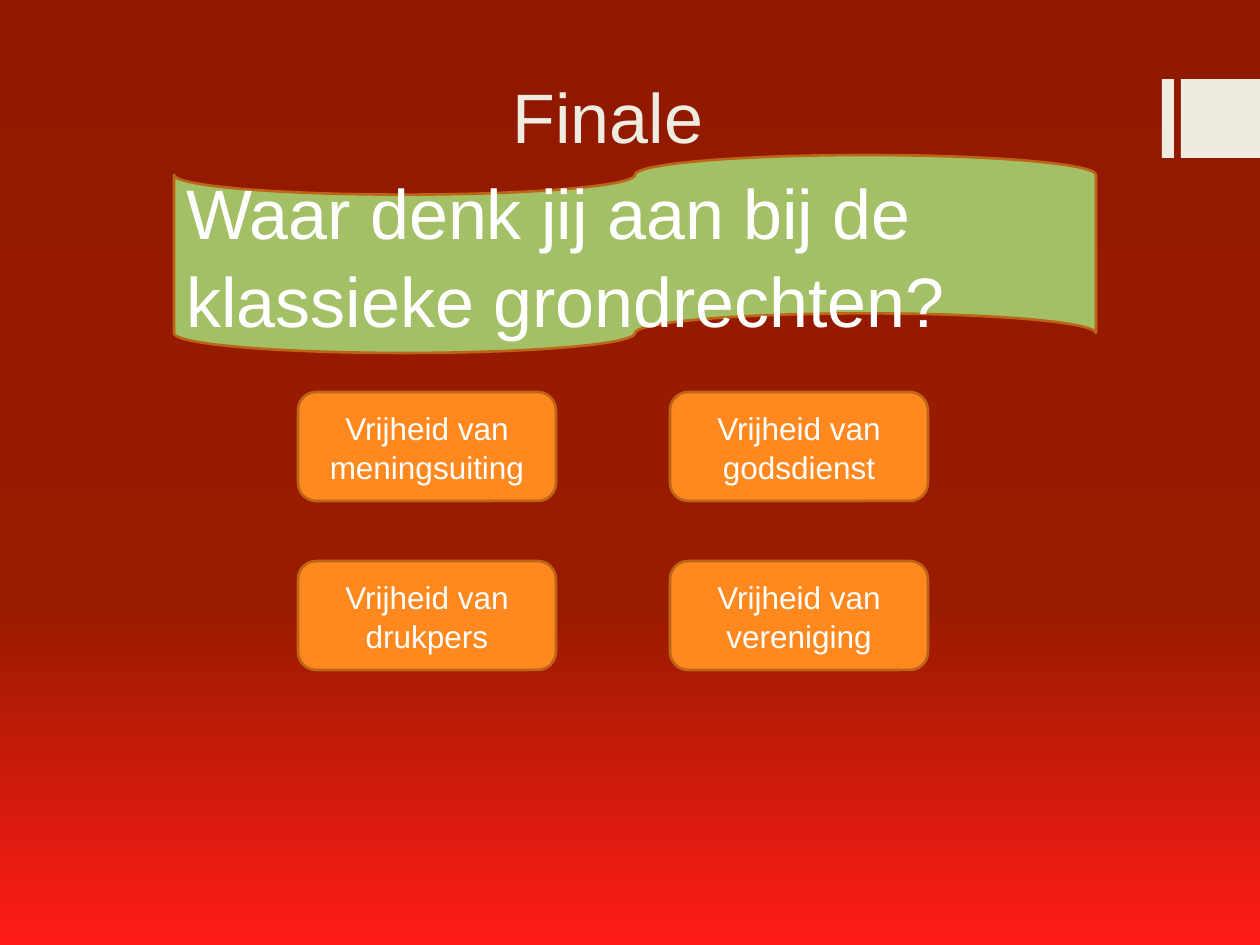
from copy import deepcopy

from pptx import Presentation, util as u
from pptx.dml.color import RGBColor
from pptx.enum import shapes, text
from pptx.oxml.ns import qn

COLORS = {
    "cream": "EEECE1", "white": "FFFFFF", "orange": "FF881F",
    "rust": "BD6517", "green": "A4C066",
}
BACKDROP = [(0, "901900"), (0.65, "9B1B00"), (1, "FF1B15")]
TITLE = "Finale"
QUESTION = "Waar denk jij aan bij de klassieke grondrechten?"
ANSWERS = [
    ["Vrijheid van meningsuiting", "Vrijheid van godsdienst"],
    ["Vrijheid van drukpers", "Vrijheid van vereniging"],
]
TABS = [(1162, 12), (1181, 79)]
ANSWER_LEFT, ANSWER_TOP = 298, 392
ANSWER_WIDTH, ANSWER_HEIGHT = 258, 109
COLUMN_STEP, ROW_STEP = 372, 169
SCALE = u.Inches(1) // 126


def px(*lengths):
    return [length * SCALE for length in lengths]


def rgb(name):
    return RGBColor.from_string(COLORS[name])


def write(box, words, size=18, color="white", align=text.PP_ALIGN.CENTER,
          anchor=text.MSO_ANCHOR.MIDDLE):
    frame = box.text_frame
    frame.word_wrap = True
    frame.vertical_anchor = anchor
    para = frame.paragraphs[0]
    para.alignment = align
    para.line_spacing = 1.04
    span = para.add_run()
    span.text = words
    span.font.name = "Arial"
    span.font.size = u.Pt(size)
    span.font.color.rgb = rgb(color)


def add_box(page, kind, area, fill, line=None):
    box = page.shapes.add_shape(kind, *px(*area))
    box.shadow.inherit = False
    box.fill.solid()
    box.fill.fore_color.rgb = rgb(fill)
    if line:
        box.line.color.rgb = rgb(line)
        box.line.width = u.Pt(1.5)
    else:
        box.line.fill.background()
    return box


def paint_backdrop(page):
    fill = page.background.fill
    fill.gradient()
    fill.gradient_angle = 270
    stop_list = page.element.find(".//" + qn("a:gsLst"))
    stop_list.append(deepcopy(stop_list[-1]))
    for stop, (position, color) in zip(fill.gradient_stops, BACKDROP):
        stop.position = position
        stop.color.rgb = RGBColor.from_string(color)


def main():
    kinds = shapes.MSO_SHAPE
    deck = Presentation()
    deck.slide_width, deck.slide_height = px(1260, 945)
    page = deck.slides.add_slide(deck.slide_layouts[6])
    paint_backdrop(page)

    for left, width in TABS:
        add_box(page, kinds.RECTANGLE, (left, 79, width, 79), "cream")

    title = page.shapes.add_textbox(*px(104, 16, 1008, 148))
    write(title, TITLE, size=40, color="cream", anchor=text.MSO_ANCHOR.BOTTOM)

    for row, answers in enumerate(ANSWERS):
        for column, answer in enumerate(answers):
            area = (ANSWER_LEFT + column * COLUMN_STEP, ANSWER_TOP + row * ROW_STEP,
                    ANSWER_WIDTH, ANSWER_HEIGHT)
            box = add_box(page, kinds.ROUNDED_RECTANGLE, area, "orange", "rust")
            write(box, answer)

    banner = add_box(page, kinds.FLOWCHART_PUNCHED_TAPE, (174, 155, 922, 198),
                     "green", "rust")
    write(banner, QUESTION, size=40, align=text.PP_ALIGN.LEFT)

    deck.save("out.pptx")


if __name__ == "__main__":
    main()
